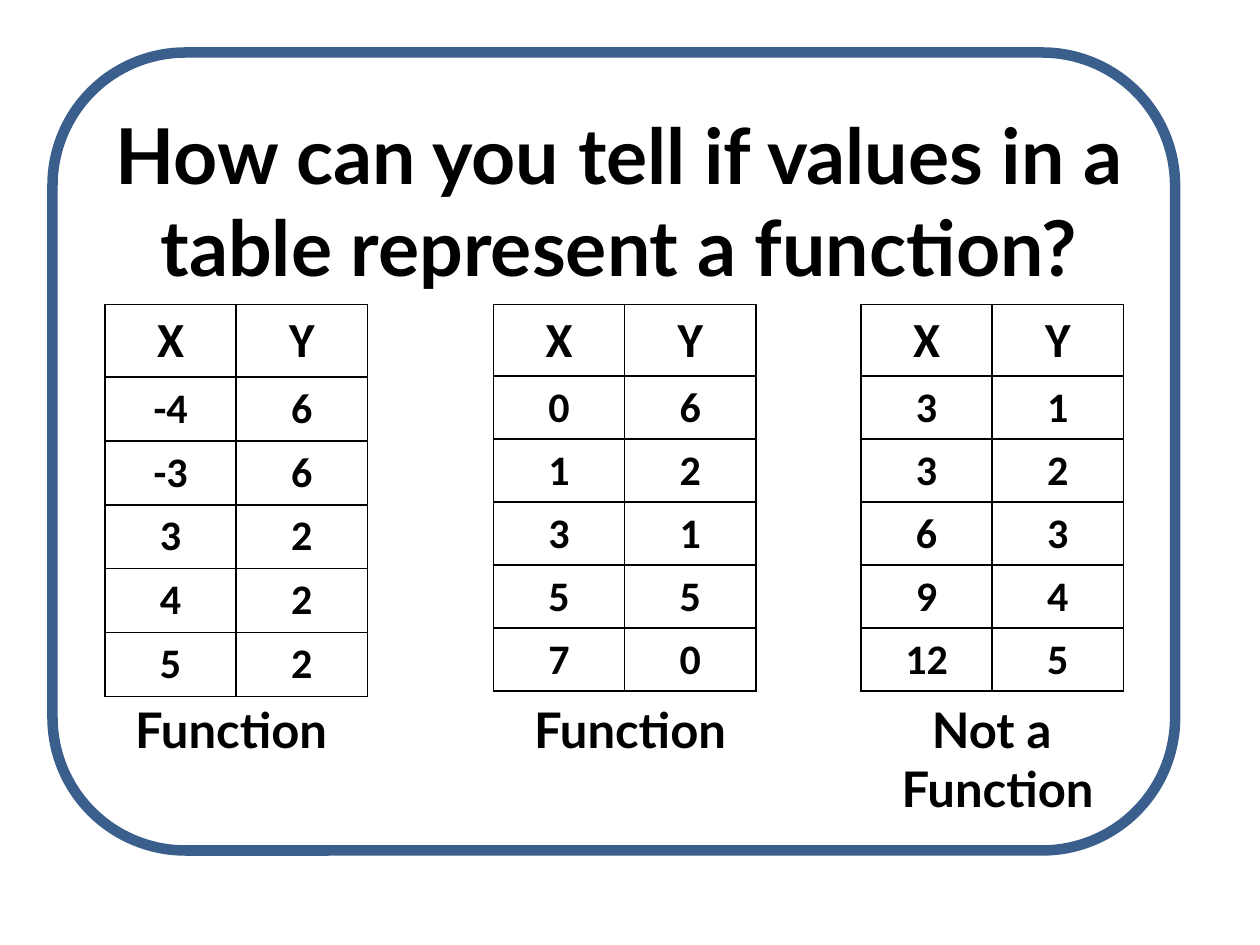
from dataclasses import dataclass

from lxml.etree import SubElement
from pptx import Presentation
from pptx.dml.color import RGBColor
from pptx.enum.shapes import MSO_SHAPE as Shape
from pptx.enum.text import MSO_ANCHOR as Anchor, MSO_AUTO_SIZE as AutoSize, PP_ALIGN as Align
from pptx.oxml.ns import qn
from pptx.util import Pt


@dataclass(frozen=True)
class Theme:
    text: RGBColor = RGBColor(0, 0, 0)
    paper: RGBColor = RGBColor(0xFF, 0xFF, 0xFF)
    frame: RGBColor = RGBColor(0x3A, 0x5F, 0x8C)
    display_font: str = "Lato"
    table_font: str = "Calibri"
    title_size: int = 44
    heading_size: int = 28
    value_size: int = 24


class SlideBuilder:
    def __init__(self, slide, theme):
        self.slide = slide
        self.theme = theme

    def style(self, paragraph, size, font_name):
        paragraph.alignment = Align.CENTER
        font = paragraph.font
        font.name, font.size, font.bold = font_name, Pt(size), True
        font.color.rgb = self.theme.text

    def frame(self, left, top, width, height):
        """Draw the rounded border behind everything else."""
        shape = self.slide.shapes.add_shape(
            Shape.ROUNDED_RECTANGLE, Pt(left), Pt(top), Pt(width), Pt(height))
        shape.shadow.inherit = False
        shape.fill.solid()
        shape.fill.fore_color.rgb = self.theme.paper
        shape.line.color.rgb = self.theme.frame
        shape.line.width = Pt(6)
        self.slide.shapes.element.insert(2, shape.element)

    def title(self, text, left, top, width, height):
        title = self.slide.shapes.title
        title.left, title.top, title.width, title.height = map(Pt, (left, top, width, height))
        title.text_frame.text = text
        title.text_frame.vertical_anchor = Anchor.MIDDLE
        title.text_frame.auto_size = AutoSize.NONE
        self.style(title.text_frame.paragraphs[0], self.theme.title_size, self.theme.display_font)

    def border(self, cell):
        """Put a thin line on all four sides of a cell, ahead of its fill."""
        properties = cell._tc.get_or_add_tcPr()
        for side in ("lnL", "lnR", "lnT", "lnB"):
            line = SubElement(properties, qn(f"a:{side}"), w=str(Pt(1)))
            fill = SubElement(line, qn("a:solidFill"))
            SubElement(fill, qn("a:srgbClr"), val=str(self.theme.text))

    def value_table(self, pairs, left, top, column_width, row_height):
        rows = [("X", "Y"), *pairs]
        table = self.slide.shapes.add_table(
            len(rows), 2, Pt(left), Pt(top),
            Pt(2 * column_width), Pt(len(rows) * row_height)).table
        for row_index, row in enumerate(rows):
            table.rows[row_index].height = Pt(row_height)
            size = self.theme.value_size if row_index else self.theme.heading_size
            for column_index, value in enumerate(row):
                cell = table.cell(row_index, column_index)
                cell.text = str(value)
                self.style(cell.text_frame.paragraphs[0], size, self.theme.table_font)
                self.border(cell)
                cell.fill.background()

    def label(self, lines, left, top, width, height):
        box = self.slide.shapes.add_textbox(Pt(left), Pt(top), Pt(width), Pt(height))
        text_frame = box.text_frame
        text_frame.word_wrap = True
        text_frame.auto_size = AutoSize.SHAPE_TO_FIT_TEXT
        text_frame.text = "\n".join(lines)
        for paragraph in text_frame.paragraphs:
            self.style(paragraph, self.theme.heading_size, self.theme.display_font)


# Table left, label left, value pairs, label lines
EXAMPLES = [
    (60, 54, [(-4, 6), (-3, 6), (3, 2), (4, 2), (5, 2)], ["Function"]),
    (282, 282, [(0, 6), (1, 2), (3, 1), (5, 5), (7, 0)], ["Function"]),
    (492, 492, [(3, 1), (3, 2), (6, 3), (9, 4), (12, 5)], ["Not a ", "Function"]),
]


def main():
    presentation = Presentation()
    presentation.slide_width, presentation.slide_height = Pt(720), Pt(540)
    slide = presentation.slides.add_slide(presentation.slide_layouts[0])
    subtitle = slide.placeholders[1].element
    subtitle.getparent().remove(subtitle)

    builder = SlideBuilder(slide, Theme())
    builder.frame(30, 30, 641.5, 456)
    builder.title("How can you tell if values in a table represent a function?", 36, 66, 636, 96)
    for table_left, label_left, pairs, lines in EXAMPLES:
        builder.value_table(pairs, table_left, 174, column_width=75, row_height=31)
        builder.label(lines, label_left, 396, 156, 7.2 + 33.8 * len(lines))
    presentation.save("out.pptx")


if __name__ == "__main__":
    main()
